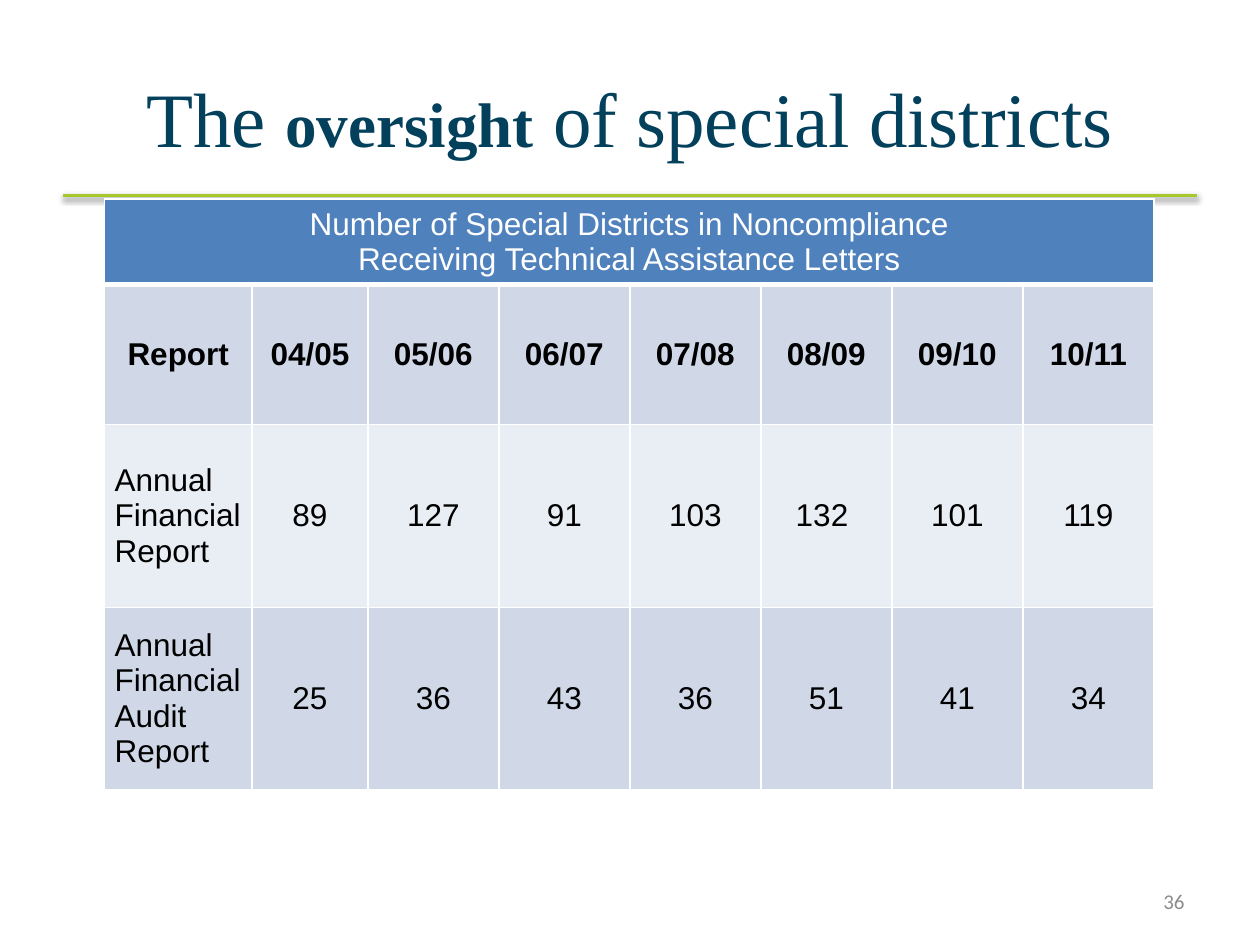
"""Build a slide with a table of special districts in noncompliance."""
from lxml import etree
from pptx import Presentation
from pptx import util as u
from pptx.dml.color import RGBColor
from pptx.enum import shapes, text
from pptx.oxml import ns

HUES = {"title": "02405C", "rule": "A5C92B", "head": "4F81BD", "dark": "D0D8E8",
        "light": "E9EDF4", "white": "FFFFFF", "black": "000000", "page": "8C8C8C"}
HEAD = "Number of Special Districts in Noncompliance\vReceiving Technical Assistance Letters"
ROWS = [
    ["Report", "04/05", "05/06", "06/07", "07/08", "08/09", "09/10", "10/11"],
    ["Annual Financial Report", "89", "127", "91", "103", "132 ", "101", "119"],
    ["Annual Financial Audit Report", "25", "36", "43", "36", "51", "41", "34"],
]
BANDS = ["dark", "light", "dark"]
WIDTHS = [1.17, 0.92] + [1.04] * 6
HEIGHTS = [0.68, 1.11, 1.45, 1.45]
ALIGN = text.PP_ALIGN


def color(name):
    return RGBColor.from_string(HUES[name])


def node(root, tag, **attrs):
    return etree.SubElement(root, ns.qn(tag), {k: str(v) for k, v in attrs.items()})


def style(run, font, size, hue, bold=False):
    run.font.name = font
    run.font.size = u.Pt(size)
    run.font.bold = bold
    run.font.color.rgb = color(hue)


def add_rule(slide):
    y = u.Inches(1.55)
    rule = slide.shapes.add_connector(
        shapes.MSO_CONNECTOR.STRAIGHT, u.Inches(0.5), y, u.Inches(9.5), y)
    rule.line.color.rgb = color("rule")
    rule.line.width = u.Pt(2)
    fx = node(rule._element.spPr, "a:effectLst")
    shade = node(fx, "a:outerShdw", blurRad=u.Pt(3.1), dist=u.Pt(1.6),
                 dir=5400000, rotWithShape=0)
    tint = node(shade, "a:srgbClr", val=HUES["black"])
    node(tint, "a:alpha", val=38000)


def add_title(slide):
    title = slide.shapes.title
    title.left, title.top = u.Inches(0.5), u.Inches(0.3)
    title.width, title.height = u.Inches(9), u.Inches(1.25)
    frame = title.text_frame
    frame.auto_size = text.MSO_AUTO_SIZE.NONE
    frame.vertical_anchor = text.MSO_ANCHOR.MIDDLE
    para = frame.paragraphs[0]
    para.alignment = ALIGN.CENTER
    for words, size, bold in [("The ", 44, False), ("oversight", 36, True),
                              (" of special districts", 44, False)]:
        run = para.add_run()
        run.text = words
        style(run, "Times New Roman", size, "title", bold)


def add_edges(cell, base):
    props = cell._tc.get_or_add_tcPr()
    for side, width in zip("LRTB", [1, 1, 1, base]):
        edge = node(props, f"a:ln{side}", w=u.Pt(width))
        node(node(edge, "a:solidFill"), "a:srgbClr", val=HUES["white"])


def fill_cell(cell, words, fill, hue="black", bold=False, align=ALIGN.CENTER, base=1):
    add_edges(cell, base)
    cell.fill.solid()
    cell.fill.fore_color.rgb = color(fill)
    cell.vertical_anchor = text.MSO_ANCHOR.MIDDLE
    cell.margin_left = cell.margin_right = u.Inches(0.08)
    cell.margin_top = cell.margin_bottom = 0
    para = cell.text_frame.paragraphs[0]
    para.text = words
    para.alignment = align
    para.space_after = u.Pt(2.9)
    for run in para.runs:
        style(run, "Arial", 18, hue, bold)


def add_grid(slide):
    grid = slide.shapes.add_table(
        len(HEIGHTS), len(WIDTHS), u.Inches(0.83), u.Inches(1.58),
        u.Inches(sum(WIDTHS)), u.Inches(sum(HEIGHTS))).table
    for col, width in zip(grid.columns, WIDTHS):
        col.width = u.Inches(width)
    for row, height in zip(grid.rows, HEIGHTS):
        row.height = u.Inches(height)
    grid.cell(0, 0).merge(grid.cell(0, len(WIDTHS) - 1))
    fill_cell(grid.cell(0, 0), HEAD, "head", "white", base=3)
    for r, (row, band) in enumerate(zip(ROWS, BANDS), 1):
        for c, words in enumerate(row):
            align = ALIGN.LEFT if r > 1 and c == 0 else ALIGN.CENTER
            fill_cell(grid.cell(r, c), words, band, bold=r == 1, align=align)


def add_page(slide):
    box = slide.shapes.add_textbox(
        u.Inches(7.17), u.Inches(6.95), u.Inches(2.33), u.Inches(0.4))
    frame = box.text_frame
    frame.word_wrap = True
    frame.vertical_anchor = text.MSO_ANCHOR.MIDDLE
    frame.text = "36"
    para = frame.paragraphs[0]
    para.alignment = ALIGN.RIGHT
    style(para.runs[0], "Calibri", 12, "page")


def main():
    deck = Presentation()
    deck.slide_width, deck.slide_height = u.Inches(10), u.Inches(7.5)
    slide = deck.slides.add_slide(deck.slide_layouts[5])
    add_rule(slide)
    add_grid(slide)
    add_title(slide)
    add_page(slide)
    deck.save("out.pptx")


if __name__ == "__main__":
    main()
